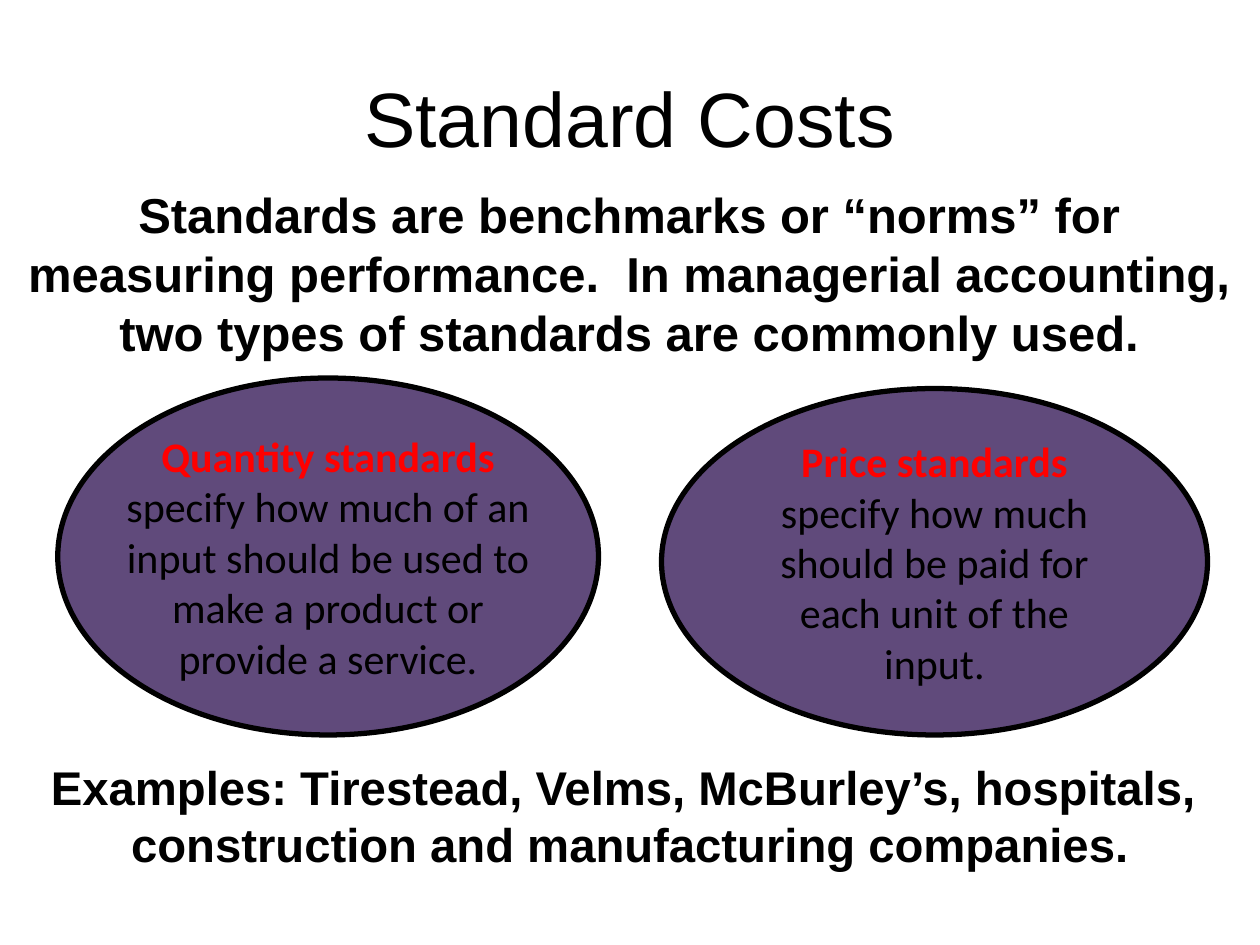
from dataclasses import dataclass
from typing import Any

from pptx import Presentation
from pptx import util as u
from pptx.dml.color import RGBColor
from pptx.enum import shapes, text

COLORS = {"ink": "000000", "accent": "FF0000", "oval": "604A7B"}


@dataclass
class SlideBuilder:
    page: Any
    heading_font: str = "Arial"
    body_font: str = "Calibri"
    oval_size: int = 24
    outline: int = 3

    def span(self, para, words, font, size, color="ink", bold=False):
        """Add runs to a paragraph, with a line break at each newline."""
        for index, line in enumerate(words.split("\n")):
            if index:
                para.add_line_break()
            if line:
                run = para.add_run()
                run.text = line
                run.font.name = font
                run.font.size = u.Pt(size)
                run.font.bold = bold
                run.font.color.rgb = RGBColor.from_string(COLORS[color])

    def title(self, words, left, top, width, height, size):
        box = self.page.shapes.title
        box.left, box.top = u.Pt(left), u.Pt(top)
        box.width, box.height = u.Pt(width), u.Pt(height)
        box.text_frame.vertical_anchor = text.MSO_ANCHOR.MIDDLE
        para = box.text_frame.paragraphs[0]
        para.alignment = text.PP_ALIGN.CENTER
        self.span(para, words, self.heading_font, size)

    def statement(self, paragraphs, left, top, width, height, size, wrap):
        box = self.page.shapes.add_textbox(*map(u.Pt, (left, top, width, height)))
        frame = box.text_frame
        frame.word_wrap = wrap
        frame.auto_size = text.MSO_AUTO_SIZE.SHAPE_TO_FIT_TEXT
        for index, words in enumerate(paragraphs):
            para = frame.add_paragraph() if index else frame.paragraphs[0]
            para.alignment = text.PP_ALIGN.CENTER
            self.span(para, words, self.heading_font, size, bold=True)

    def oval(self, term, meaning, left, top, width, height):
        shape = self.page.shapes.add_shape(
            shapes.MSO_SHAPE.OVAL, *map(u.Pt, (left, top, width, height)))
        shape.shadow.inherit = False
        shape.fill.solid()
        shape.fill.fore_color.rgb = RGBColor.from_string(COLORS["oval"])
        shape.line.color.rgb = RGBColor.from_string(COLORS["ink"])
        shape.line.width = u.Pt(self.outline)
        frame = shape.text_frame
        frame.word_wrap = False
        frame.vertical_anchor = text.MSO_ANCHOR.MIDDLE
        para = frame.paragraphs[0]
        para.alignment = text.PP_ALIGN.CENTER
        self.span(para, term + "\n", self.body_font, self.oval_size, "accent", True)
        self.span(para, meaning, self.body_font, self.oval_size)


def main():
    deck = Presentation()
    deck.slide_width, deck.slide_height = u.Pt(720), u.Pt(540)
    title_only = deck.slide_layouts[5]
    slide = SlideBuilder(deck.slides.add_slide(title_only))

    slide.title("Standard Costs", 36, 21.6, 648, 90, size=44)
    slide.statement(
        ["Standards are benchmarks or “norms” for\n"
         "measuring performance.  In managerial accounting,",
         "two types of standards are commonly used."],
        8, 102, 703, 108, size=28, wrap=False)
    slide.oval(
        "Quantity standards",
        "specify how much of an\ninput should be used to\n"
        "make a product or\nprovide a service.",
        33, 216, 309, 204)
    slide.oval(
        "Price standards",
        "specify how much\nshould be paid for\neach unit of the\ninput.",
        378, 222, 312, 198)
    slide.statement(
        ["Examples: Tirestead, Velms, McBurley’s, hospitals, ",
         "construction and manufacturing companies."],
        0, 430, 720, 72, size=27, wrap=True)

    deck.save("out.pptx")


if __name__ == "__main__":
    main()
